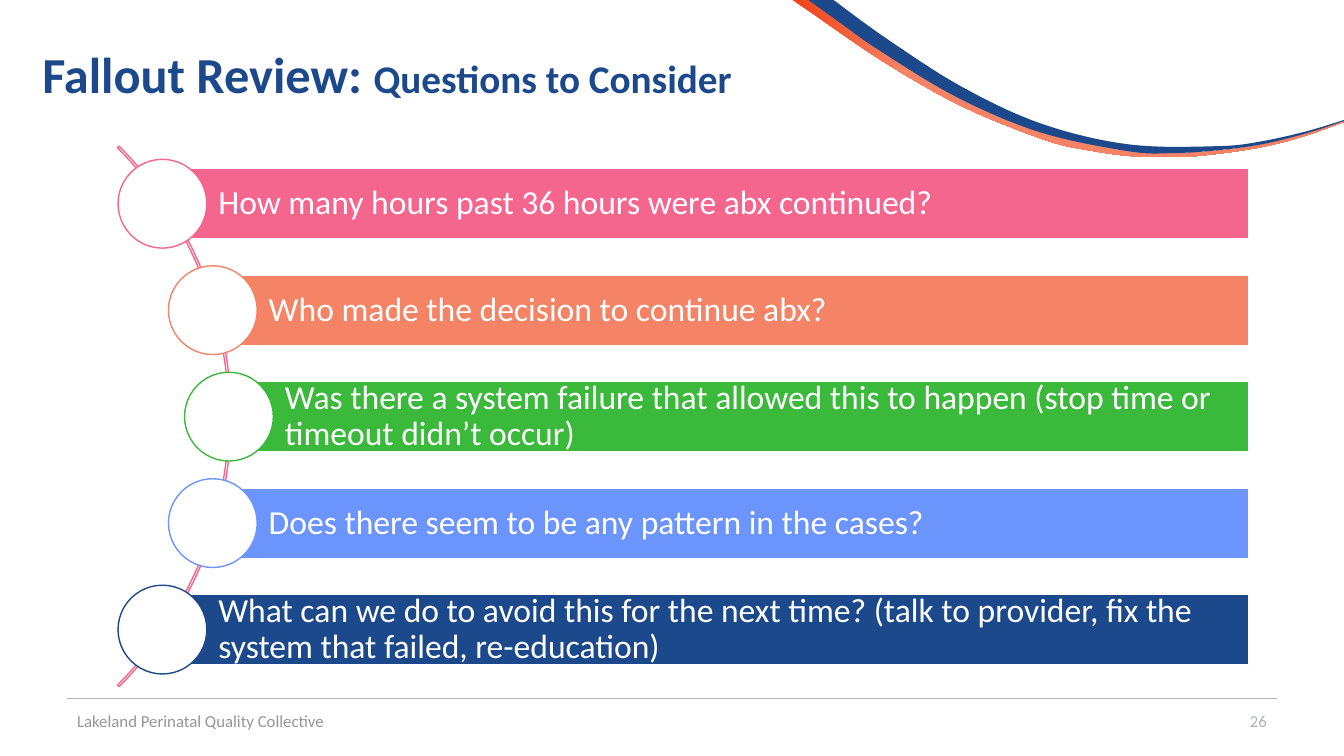
from dataclasses import dataclass
from pptx import Presentation
from pptx.dml.color import RGBColor
from pptx.enum.shapes import MSO_CONNECTOR, MSO_SHAPE
from pptx.enum.text import MSO_ANCHOR, PP_ALIGN
from pptx.oxml.ns import qn
from pptx.util import Pt
from lxml.etree import SubElement


@dataclass(frozen=True)
class Theme:
    font: str = "Calibri"
    white: str = "FFFFFF"
    navy: str = "1C498B"
    pink: str = "F5668F"
    coral: str = "F58366"
    green: str = "3AB93A"
    blue: str = "6B95FD"
    flame: str = "F04115"
    rule: str = "AFB3B9"
    gray: str = "949699"
    head: int = 36
    sub: int = 28
    body: int = 24
    foot: int = 12


def tint(code):
    return RGBColor.from_string(code)


def write(para, text, font, size, color, bold=False, align=PP_ALIGN.LEFT, space=None):
    para.alignment = align
    if space:
        para.line_spacing = space
    run = para.add_run()
    run.text = text
    run.font.name = font
    run.font.size = Pt(size)
    run.font.bold = bold
    run.font.color.rgb = tint(color)


def smooth(knots, steps=8):
    ends = [knots[0], *knots, knots[-1]]
    curve = []
    for a, b, c, d in zip(ends, ends[1:], ends[2:], ends[3:]):
        for step in range(steps):
            t = step / steps
            curve.append(tuple(
                (2 * q + (r - p) * t + (2 * p - 5 * q + 4 * r - s) * t ** 2
                 + (3 * q - p - 3 * r + s) * t ** 3) / 2
                for p, q, r, s in zip(a, b, c, d)))
    return curve + [knots[-1]]


class Deck:
    def __init__(self, theme):
        self.theme = theme
        self.file = Presentation()
        self.file.slide_width, self.file.slide_height = Pt(960), Pt(540)
        self.slide = self.file.slides.add_slide(self.file.slide_layouts[5])
        self.shapes = self.slide.shapes

    def title(self, parts, box):
        holder = self.shapes.title
        holder.left, holder.top, holder.width, holder.height = map(Pt, box)
        frame = holder.text_frame
        frame.word_wrap = True
        frame.vertical_anchor = MSO_ANCHOR.MIDDLE
        for text, size in parts:
            write(frame.paragraphs[0], text, self.theme.font, size, self.theme.navy, bold=True)

    def label(self, text, box, color, align=PP_ALIGN.LEFT):
        frame = self.shapes.add_textbox(*map(Pt, box)).text_frame
        frame.word_wrap = True
        frame.vertical_anchor = MSO_ANCHOR.MIDDLE
        write(frame.paragraphs[0], text, self.theme.font, self.theme.foot, color, align=align)

    def shape(self, kind, box, line, fill=None):
        item = self.shapes.add_shape(kind, *map(Pt, box))
        item.shadow.inherit = False
        item.line.color.rgb = tint(line)
        item.line.width = Pt(1)
        if fill:
            item.fill.solid()
            item.fill.fore_color.rgb = tint(fill)
        else:
            item.fill.background()
        return item

    def bar(self, text, box, color):
        frame = self.shape(MSO_SHAPE.RECTANGLE, box, self.theme.white, color).text_frame
        frame.word_wrap = True
        frame.vertical_anchor = MSO_ANCHOR.MIDDLE
        frame.margin_left = Pt(40)
        frame.margin_top = frame.margin_right = frame.margin_bottom = Pt(5)
        write(frame.paragraphs[0], text, self.theme.font, self.theme.body,
              self.theme.white, space=0.9)

    def swoosh(self, upper, lower, stops):
        first, *rest = [(Pt(x), Pt(y)) for x, y in smooth(upper) + smooth(lower)[::-1]]
        pen = self.shapes.build_freeform(*first)
        pen.add_line_segments(rest, close=True)
        item = pen.convert_to_shape()
        item.shadow.inherit = False
        item.line.fill.background()
        if len(stops) == 1:
            item.fill.solid()
            item.fill.fore_color.rgb = tint(stops[0][1])
            return
        item.fill.gradient()
        item.fill.gradient_angle = 0
        for stop, (place, color) in zip(item.fill.gradient_stops, stops):
            stop.position = place
            stop.color.rgb = tint(color)

    def rule(self, left, right, y):
        line = self.shapes.add_connector(
            MSO_CONNECTOR.STRAIGHT, Pt(left), Pt(y), Pt(right), Pt(y))
        line.line.color.rgb = tint(self.theme.rule)
        line.line.width = Pt(0.5)
        SubElement(line._element.spPr, qn("a:effectLst"))


def main():
    theme = Theme()
    deck = Deck(theme)
    deck.swoosh(
        [(580, 0), (635, 39), (690, 71), (748, 96), (810, 108), (841, 109.5),
         (873, 107.5), (904, 103), (935, 95), (960, 86.5)],
        [(566, 0), (579, 8.6), (632, 44.6), (688, 76.3), (746.6, 100), (777.6, 107.3),
         (809.3, 111.6), (841.7, 112.3), (873.4, 109.4), (904.3, 104.4),
         (931.7, 97.2), (960, 87.1)],
        [(0, theme.flame), (0.2, theme.coral)])
    deck.swoosh(
        [(595.4, 0), (633, 27.4), (687, 62), (744.5, 88.6), (806.7, 103.2),
         (870.5, 104.4), (902, 100.8), (934, 93.6), (960, 85.7)],
        [(577.4, 0), (600.5, 16.6), (627, 35.3), (682.6, 69), (742.3, 94.3),
         (805.7, 108), (838, 109.4), (870.5, 107.3), (902, 103), (934, 95), (960, 86.4)],
        [(0, theme.navy)])
    deck.rule(48, 912, 499)
    deck.title([("Fallout Review: ", theme.head), ("Questions to Consider", theme.sub)],
               (23, 0, 864, 104.4))
    deck.label("26", (696, 500.5, 216, 29), theme.rule, align=PP_ALIGN.RIGHT)
    deck.label("Lakeland Perinatal Quality Collective", (48, 500.5, 324, 29), theme.gray)

    arc = deck.shape(MSO_SHAPE.BLOCK_ARC, (-381, 24.5, 546, 546), theme.pink)
    for spot, value in enumerate((189, 27, 0.003)):
        arc.adjustments[spot] = value

    rows = [
        ("How many hours past 36 hours were abx continued?", 116, theme.pink),
        ("Who made the decision to continue abx?", 152, theme.coral),
        ("Was there a system failure that allowed this to happen "
         "(stop time or timeout didn’t occur)", 163.5, theme.green),
        ("Does there seem to be any pattern in the cases?", 152, theme.blue),
        ("What can we do to avoid this for the next time? "
         "(talk to provider, fix the system that failed, re-education)", 116, theme.navy),
    ]
    right, top, pitch, tall, disc = 892, 145.5, 76.05, 50.4, 63.4
    for row, (text, left, color) in enumerate(rows):
        mid = top + row * pitch
        deck.bar(text, (left, mid - tall / 2, right - left, tall), color)
        deck.shape(MSO_SHAPE.OVAL, (left - disc / 2, mid - disc / 2, disc, disc),
                   color, theme.white)
    deck.file.save("out.pptx")


if __name__ == "__main__":
    main()
